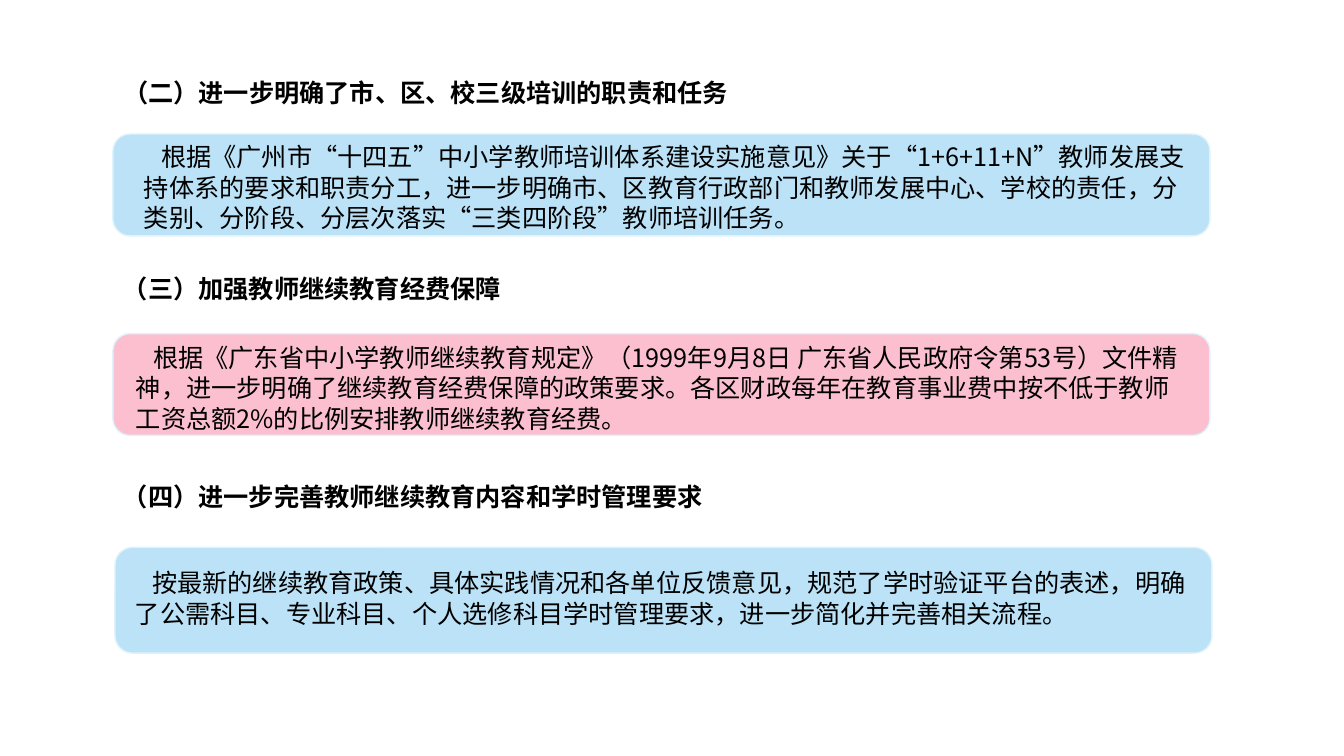
from pptx import Presentation
from pptx.dml.color import RGBColor
from pptx.enum.shapes import MSO_SHAPE
from pptx.enum.text import MSO_ANCHOR, MSO_AUTO_SIZE, PP_ALIGN
from pptx.oxml.ns import qn
from pptx.util import Inches, Pt

ROUNDED = MSO_SHAPE.ROUNDED_RECTANGLE
TOP = MSO_ANCHOR.TOP
GROW = MSO_AUTO_SIZE.SHAPE_TO_FIT_TEXT
LEFT = PP_ALIGN.LEFT

FONT = "Noto Sans CJK SC"
BLUE, PINK, EDGE, BLACK = "BBE2F6", "FBBFD0", "E0F2FB", "000000"
MARGIN, CARD_WIDTH, HEADING_WIDTH = 1.12, 10.88, 6.58
BODY_PITCH = 21.8
FIRST_LINE_INDENT = 0.17

# Heading and card: (top, height); body: (shift from card, width, height)
SECTIONS = [
    {
        "heading": "（二）进一步明确了市、区、校三级培训的职责和任务",
        "heading_rows": (0.74, 0.38), "pitch": 20,
        "card_rows": (1.33, 1.01), "card_left": MARGIN, "fill": BLUE,
        "body_box": (0.21, 0.02, 10.57, 1.01),
        "body": "根据《广州市“十四五”中小学教师培训体系建设实施意见》关于“1+6+11+N”教师发展"
                "支持体系的要求和职责分工，进一步明确市、区教育行政部门和教师发展中心、学校的责任，"
                "分类别、分阶段、分层次落实“三类四阶段”教师培训任务。",
    },
    {
        "heading": "（三）加强教师继续教育经费保障",
        "heading_rows": (2.68, 0.34), "pitch": 20,
        "card_rows": (3.31, 1.01), "card_left": MARGIN, "fill": PINK,
        "body_box": (0.13, 0.03, 10.57, 1.01),
        "body": "根据《广东省中小学教师继续教育规定》（1999年9月8日 广东省人民政府令第53号）文"
                "件精神，进一步明确了继续教育经费保障的政策要求。各区财政每年在教育事业费中按不低于"
                "教师工资总额2%的比例安排教师继续教育经费。",
    },
    {
        "heading": "（四）进一步完善教师继续教育内容和学时管理要求",
        "heading_rows": (4.79, 0.34), "pitch": 17,
        "card_rows": (5.43, 1.05), "card_left": MARGIN + 0.02, "fill": BLUE,
        "body_box": (0.1, 0.15, 10.66, 0.71),
        "body": "按最新的继续教育政策、具体实践情况和各单位反馈意见，规范了学时验证平台的表述，明确"
                "了公需科目、专业科目、个人选修科目学时管理要求，进一步简化并完善相关流程。",
    },
]


def color(value):
    return RGBColor.from_string(value)


def write_text(box, text, pitch, bold=False, indent=0):
    """Fill a text box with one paragraph at a fixed line pitch."""
    frame = box.text_frame
    for name, value in {"word_wrap": True, "vertical_anchor": TOP,
                        "auto_size": GROW}.items():
        setattr(frame, name, value)
    para = frame.paragraphs[0]
    for name, value in {"alignment": LEFT, "line_spacing": Pt(pitch),
                        "space_before": Pt(0)}.items():
        setattr(para, name, value)
    para._p.get_or_add_pPr().set("indent", str(Inches(indent)))
    span = para.add_run()
    span.text = text
    for name, value in {"name": FONT, "size": Pt(18), "bold": bold}.items():
        setattr(span.font, name, value)
    span.font.color.rgb = color(BLACK)
    east_asian = span._r.get_or_add_rPr().makeelement(qn("a:ea"), {"typeface": FONT})
    span.font._element.find(qn("a:latin")).addnext(east_asian)


def add_heading(page, section, title=None):
    """Place a heading, in the title placeholder when one is given."""
    top, height = section["heading_rows"]
    place = [Inches(v) for v in (MARGIN, top, HEADING_WIDTH, height)]
    if title is None:
        box = page.shapes.add_textbox(*place)
    else:
        box = title
        box.left, box.top, box.width, box.height = place
    write_text(box, section["heading"], section["pitch"], bold=True)


def add_card(page, section):
    """Place a rounded panel and its text, set relative to the panel."""
    left = section["card_left"]
    top, height = section["card_rows"]
    card = page.shapes.add_shape(
        ROUNDED, *[Inches(v) for v in (left, top, CARD_WIDTH, height)])
    card.shadow.inherit = False
    card.fill.solid()
    card.fill.fore_color.rgb = color(section["fill"])
    card.line.color.rgb = color(EDGE)
    card.line.width = Pt(1)

    shift_x, shift_y, width, body_height = section["body_box"]
    body = page.shapes.add_textbox(
        *[Inches(v) for v in (left + shift_x, top + shift_y, width, body_height)])
    write_text(body, section["body"], BODY_PITCH, indent=FIRST_LINE_INDENT)


def main():
    deck = Presentation()
    deck.slide_width, deck.slide_height = Inches(13.33), Inches(7.5)
    page = deck.slides.add_slide(deck.slide_layouts.get_by_name("Title Only"))

    # The first heading is the slide title
    for index, section in enumerate(SECTIONS):
        add_heading(page, section, page.shapes.title if index == 0 else None)
        add_card(page, section)

    deck.save("out.pptx")


if __name__ == "__main__":
    main()
